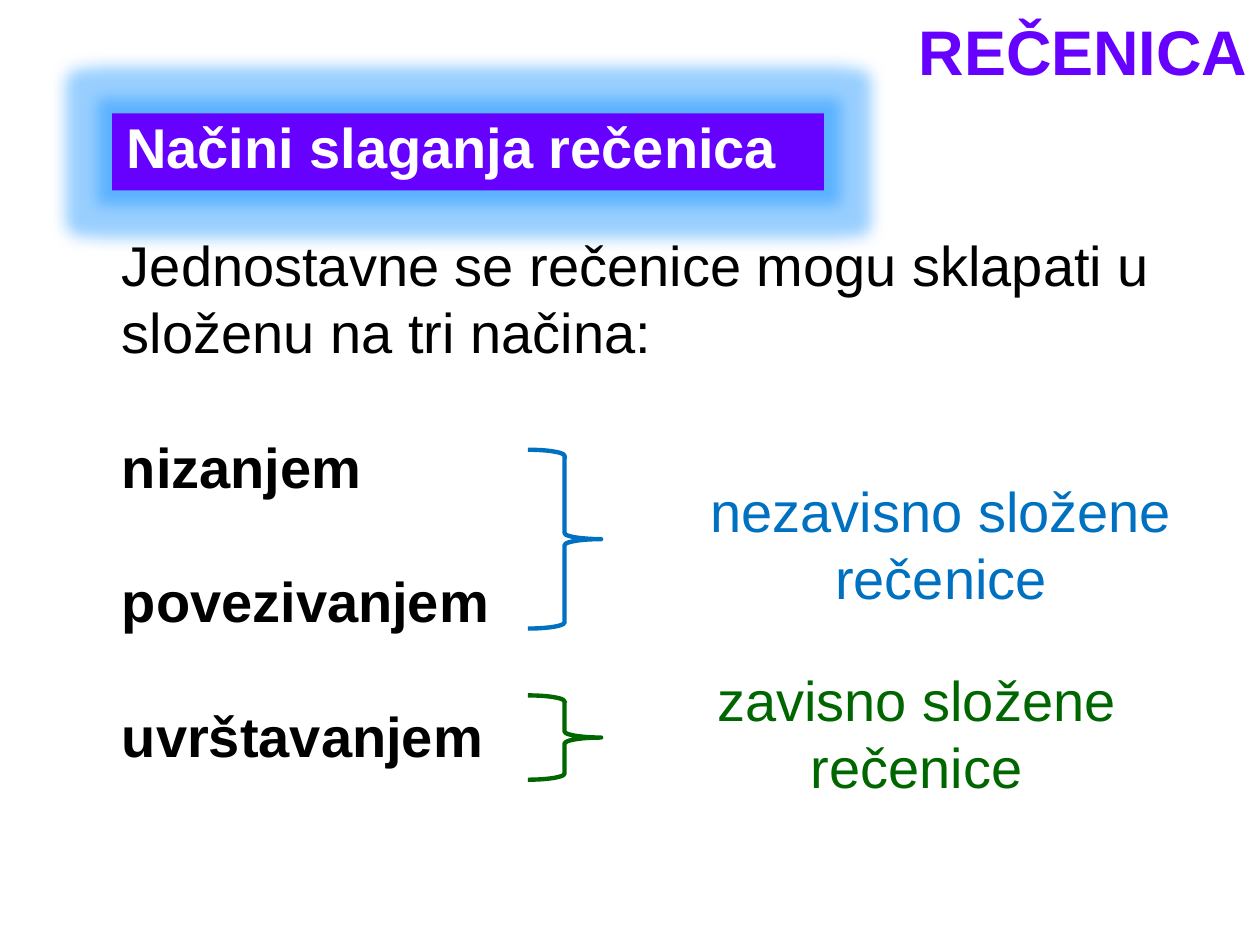
from lxml import etree
from pptx import Presentation
from pptx.dml.color import RGBColor
from pptx.enum import shapes, text
from pptx.oxml import ns
from pptx.util import Pt

COLORS = {
    "violet": "6600FF",
    "white": "FFFFFF",
    "black": "000000",
    "blue": "0070C0",
    "green": "006600",
    "glow": "0088FF",
}
FONT = "Arial"
BODY_SIZE = 32
LINE_GAP = 38.4


def rgb(name):
    return RGBColor.from_string(COLORS[name])


def add_text(page, box, lines, color, size=BODY_SIZE, align=text.PP_ALIGN.LEFT,
             anchor=text.MSO_ANCHOR.TOP, gap=0, spacing=None):
    """Place (wording, bold) lines in box, with gap points between them."""
    frame = page.shapes.add_textbox(*map(Pt, box)).text_frame
    frame.word_wrap = True
    frame.vertical_anchor = anchor
    for index, (wording, bold) in enumerate(lines):
        para = frame.add_paragraph() if index else frame.paragraphs[0]
        para.alignment = align
        if spacing:
            para.line_spacing = spacing
        if index:
            para.space_before = Pt(gap)
        span = para.add_run()
        span.text = wording
        span.font.name = FONT
        span.font.size = Pt(size)
        span.font.bold = bold
        span.font.color.rgb = rgb(color)
    return frame


def add_glow(shape, color, radius):
    effects = shape._element.spPr.find(ns.qn("a:effectLst"))
    glow = etree.SubElement(effects, ns.qn("a:glow"), rad=str(Pt(radius)))
    tint = etree.SubElement(glow, ns.qn("a:srgbClr"), val=COLORS[color])
    etree.SubElement(tint, ns.qn("a:alpha"), val="40000")


def add_banner(page, box, wording):
    left, top, width, height = box
    bar = page.shapes.add_shape(shapes.MSO_SHAPE.RECTANGLE, *map(Pt, box))
    bar.shadow.inherit = False
    bar.fill.solid()
    bar.fill.fore_color.rgb = rgb("violet")
    bar.line.fill.background()
    add_glow(bar, "glow", 18)
    label = add_text(page, (left + 3, top - 19.5, 600, 60.5), [(wording, True)],
                     "white", anchor=text.MSO_ANCHOR.BOTTOM)
    label.margin_left = label.margin_right = Pt(5)
    label.margin_top = label.margin_bottom = Pt(3)


def add_group(page, box, wording, color, label_box):
    """Draw a brace in box and its label, label_box being relative to the brace."""
    left, top, width, height = box
    brace = page.shapes.add_shape(shapes.MSO_SHAPE.RIGHT_BRACE, *map(Pt, box))
    brace.shadow.inherit = False
    brace.fill.background()
    brace.line.color.rgb = rgb(color)
    brace.line.width = Pt(2.5)
    dx, dy, label_width, label_height = label_box
    add_text(page, (left + dx, top + dy, label_width, label_height),
             [(wording, False)], color, align=text.PP_ALIGN.CENTER)


def main():
    deck = Presentation()
    deck.slide_width, deck.slide_height = Pt(720), Pt(540)
    page = deck.slides.add_slide(deck.slide_layouts[6])

    add_text(page, (160.5, 0, 559.5, 54.7), [("REČENICA", True)], "violet", size=36,
             align=text.PP_ALIGN.RIGHT, anchor=text.MSO_ANCHOR.BOTTOM, spacing=0.9)
    add_banner(page, (64, 64.8, 406.8, 44), "Načini slaganja rečenica")
    add_text(page, (62.6, 128.2, 688.3, 317.5), [
        ("Jednostavne se rečenice mogu sklapati u složenu na tri načina:", False),
        ("nizanjem", True),
        ("povezivanjem", True),
        ("uvrštavanjem", True),
    ], "black", gap=LINE_GAP)
    add_group(page, (301.7, 257, 41.8, 102.2), "nezavisno složene rečenice",
              "blue", (75.6, 11.5, 321, 85))
    add_group(page, (301.7, 397.4, 41.8, 48.2), "zavisno složene rečenice",
              "green", (75.6, -20.9, 293, 85))

    deck.save("out.pptx")


if __name__ == "__main__":
    main()
